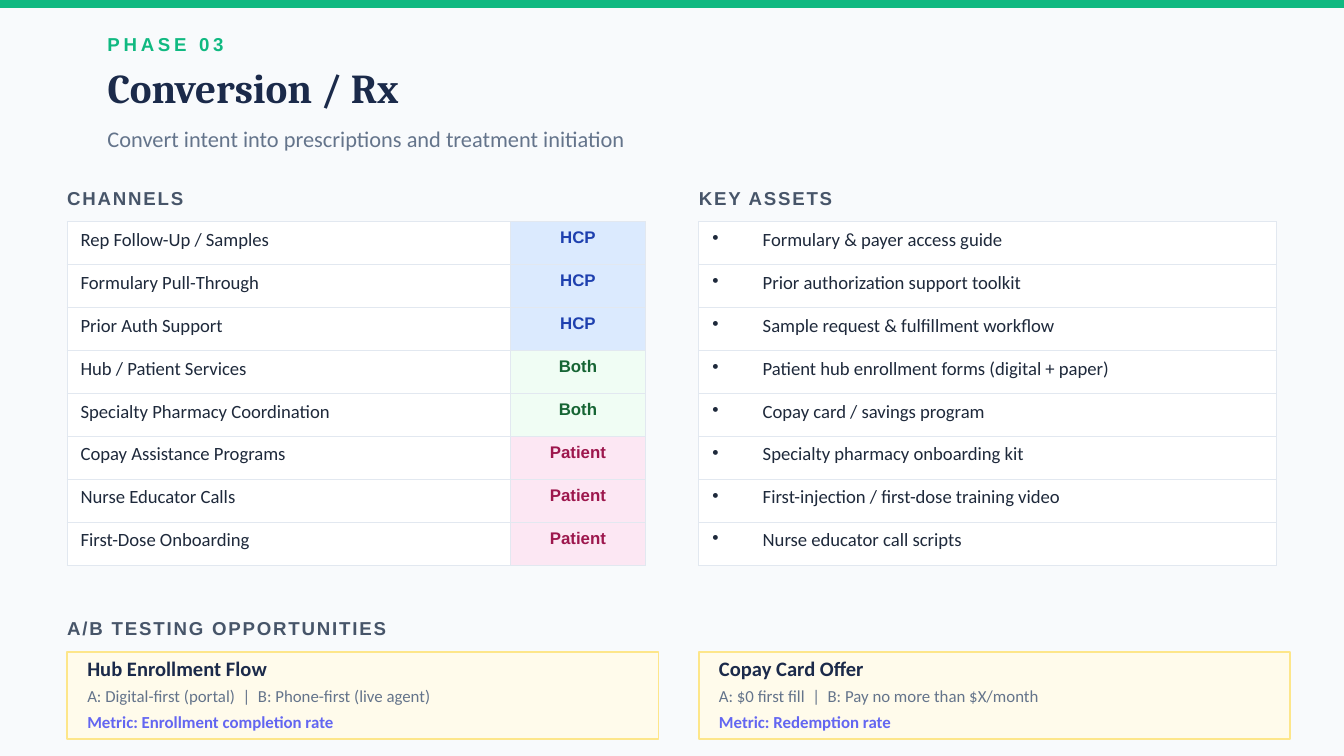
"""Build the Conversion / Rx phase slide with channels, key assets and A/B tests."""
import pptx
import pptx.dml.color
import pptx.enum.shapes
import pptx.enum.text
import pptx.oxml
import pptx.oxml.ns
import pptx.util

COLORS = {
    "background": "F8FAFC", "accent": "10B981", "navy": "1B2A4A",
    "muted": "64748B", "heading": "475569", "body": "1E293B",
    "white": "FFFFFF", "border": "E2E8F0", "metric": "6366F1",
    "card": "FFFBEB", "card_line": "FDE68A",
}
AUDIENCES = {
    "HCP": {"color": "1E40AF", "fill": "DBEAFE"},
    "Both": {"color": "166534", "fill": "F0FDF4"},
    "Patient": {"color": "9D174D", "fill": "FCE7F3"},
}
CHANNELS = [
    ("Rep Follow-Up / Samples", "HCP"),
    ("Formulary Pull-Through", "HCP"),
    ("Prior Auth Support", "HCP"),
    ("Hub / Patient Services", "Both"),
    ("Specialty Pharmacy Coordination", "Both"),
    ("Copay Assistance Programs", "Patient"),
    ("Nurse Educator Calls", "Patient"),
    ("First-Dose Onboarding", "Patient"),
]
ASSETS = [
    "Formulary & payer access guide",
    "Prior authorization support toolkit",
    "Sample request & fulfillment workflow",
    "Patient hub enrollment forms (digital + paper)",
    "Copay card / savings program",
    "Specialty pharmacy onboarding kit",
    "First-injection / first-dose training video",
    "Nurse educator call scripts",
]
TESTS = [
    ("Hub Enrollment Flow",
     "A: Digital-first (portal)  |  B: Phone-first (live agent)",
     "Metric: Enrollment completion rate"),
    ("Copay Card Offer",
     "A: $0 first fill  |  B: Pay no more than $X/month",
     "Metric: Redemption rate"),
]

inch = pptx.util.Inches
rgb = pptx.dml.color.RGBColor.from_string
MARGIN, COLUMN_STEP, ROW = 0.5, 4.7, 0.32
COLUMNS = [MARGIN + COLUMN_STEP * number for number in range(2)]
HEADER_LEFT, HEADING_TOP, TABLE_TOP = 0.8, 1.35, 1.65
TESTS_TOP, CARD_TOP, CARD_PAD = 4.55, 4.85, 0.15
BULLET_INDENT = pptx.util.Pt(27)


def write(text, frame, size=10, font="Calibri", color=COLORS["body"], bold=False,
          spacing=0, align=pptx.enum.text.PP_ALIGN.LEFT, bullet=False):
    para = frame.paragraphs[0]
    para.alignment = align
    if bullet:
        settings = para._p.get_or_add_pPr()
        settings.set("marL", str(BULLET_INDENT))
        settings.set("indent", str(-BULLET_INDENT))
        for element in ('buSzPct {} val="100000"', 'buChar {} char="•"'):
            settings.append(pptx.oxml.parse_xml(
                f'<a:{element.format(pptx.oxml.ns.nsdecls("a"))}/>'))
        para.font.size = pptx.util.Pt(size)
        para.font.name = font
    span = para.add_run()
    span.text = text
    span.font.size = pptx.util.Pt(size)
    span.font.name = font
    span.font.bold = bold
    span.font.color.rgb = rgb(color)
    if spacing:
        span._r.get_or_add_rPr().set("spc", str(spacing * 100))


def label(text, left, top, width, height, box=None, **style):
    box = box or page.shapes.add_textbox(0, 0, 0, 0)
    box.left, box.top, box.width, box.height = map(inch, (left, top, width, height))
    frame = box.text_frame
    frame.word_wrap = True
    frame.auto_size = pptx.enum.text.MSO_AUTO_SIZE.NONE
    frame.vertical_anchor = pptx.enum.text.MSO_ANCHOR.MIDDLE
    frame.margin_left = frame.margin_right = frame.margin_top = frame.margin_bottom = 0
    write(text, frame, **style)


deck = pptx.Presentation()
deck.slide_width, deck.slide_height = inch(10), inch(10 * 9 / 16)
page = deck.slides.add_slide(deck.slide_layouts.get_by_name("Title Only"))
page.background.fill.solid()
page.background.fill.fore_color.rgb = rgb(COLORS["background"])

RECTANGLE = pptx.enum.shapes.MSO_SHAPE.RECTANGLE
band = page.shapes.add_shape(RECTANGLE, 0, 0, deck.slide_width, inch(0.06))
band.shadow.inherit = False
band.fill.solid()
band.fill.fore_color.rgb = rgb(COLORS["accent"])
band.line.fill.background()

label("PHASE 03", HEADER_LEFT, 0.2, 2, 0.25,
      font="Arial", color=COLORS["accent"], bold=True, spacing=2)
label("Conversion / Rx", HEADER_LEFT, 0.42, 5, 0.45, box=page.shapes.title,
      size=22, font="Cambria", color=COLORS["navy"], bold=True)
label("Convert intent into prescriptions and treatment initiation",
      HEADER_LEFT, 0.88, 8, 0.3, size=12, color=COLORS["muted"])

headings = [
    ("CHANNELS", COLUMNS[0], HEADING_TOP, 2),
    ("KEY ASSETS", COLUMNS[1], HEADING_TOP, 2),
    ("A/B TESTING OPPORTUNITIES", COLUMNS[0], TESTS_TOP, 4),
]
for text, left, top, width in headings:
    label(text, left, top, width, 0.25,
          font="Arial", color=COLORS["heading"], bold=True, spacing=1)

tables = [(CHANNELS, [3.3, 1]), ([(asset,) for asset in ASSETS], [4.3])]
for left, (rows, widths) in zip(COLUMNS, tables):
    table = page.shapes.add_table(
        len(rows), len(widths), inch(left), inch(TABLE_TOP),
        inch(sum(widths)), inch(ROW * len(rows))).table
    table.first_row = table.horz_banding = False
    for column, width in zip(table.columns, widths):
        column.width = inch(width)
    for row, texts in zip(table.rows, rows):
        row.height = inch(ROW)
        for cell, text in zip(row.cells, texts):
            for edge in ("lnL", "lnR", "lnT", "lnB"):
                cell._tc.get_or_add_tcPr().append(pptx.oxml.parse_xml(
                    f'<a:{edge} {pptx.oxml.ns.nsdecls("a")} w="{pptx.util.Pt(0.5)}">'
                    f'<a:solidFill><a:srgbClr val="{COLORS["border"]}"/></a:solidFill>'
                    f'</a:{edge}>'))
            audience = AUDIENCES.get(text)
            cell.fill.solid()
            cell.fill.fore_color.rgb = rgb(audience["fill"] if audience else COLORS["white"])
            if audience:
                write(text, cell.text_frame, size=9, font="Arial", bold=True,
                      color=audience["color"], align=pptx.enum.text.PP_ALIGN.CENTER)
            else:
                write(text, cell.text_frame, bullet=len(widths) == 1)

for left, (name, variants, metric) in zip(COLUMNS, TESTS):
    card = page.shapes.add_shape(
        RECTANGLE, inch(left), inch(CARD_TOP), inch(4.4), inch(0.65))
    card.shadow.inherit = False
    card.fill.solid()
    card.fill.fore_color.rgb = rgb(COLORS["card"])
    card.line.color.rgb = rgb(COLORS["card_line"])
    card.line.width = pptx.util.Pt(1)
    text_left = left + CARD_PAD
    label(name, text_left, CARD_TOP, 4.1, 0.25,
          size=11, color=COLORS["navy"], bold=True)
    label(variants, text_left, CARD_TOP + 0.23, 4.1, 0.2,
          size=9, color=COLORS["muted"])
    label(metric, text_left, CARD_TOP + 0.42, 4.1, 0.2,
          size=9, color=COLORS["metric"], bold=True)

deck.save("out.pptx")
